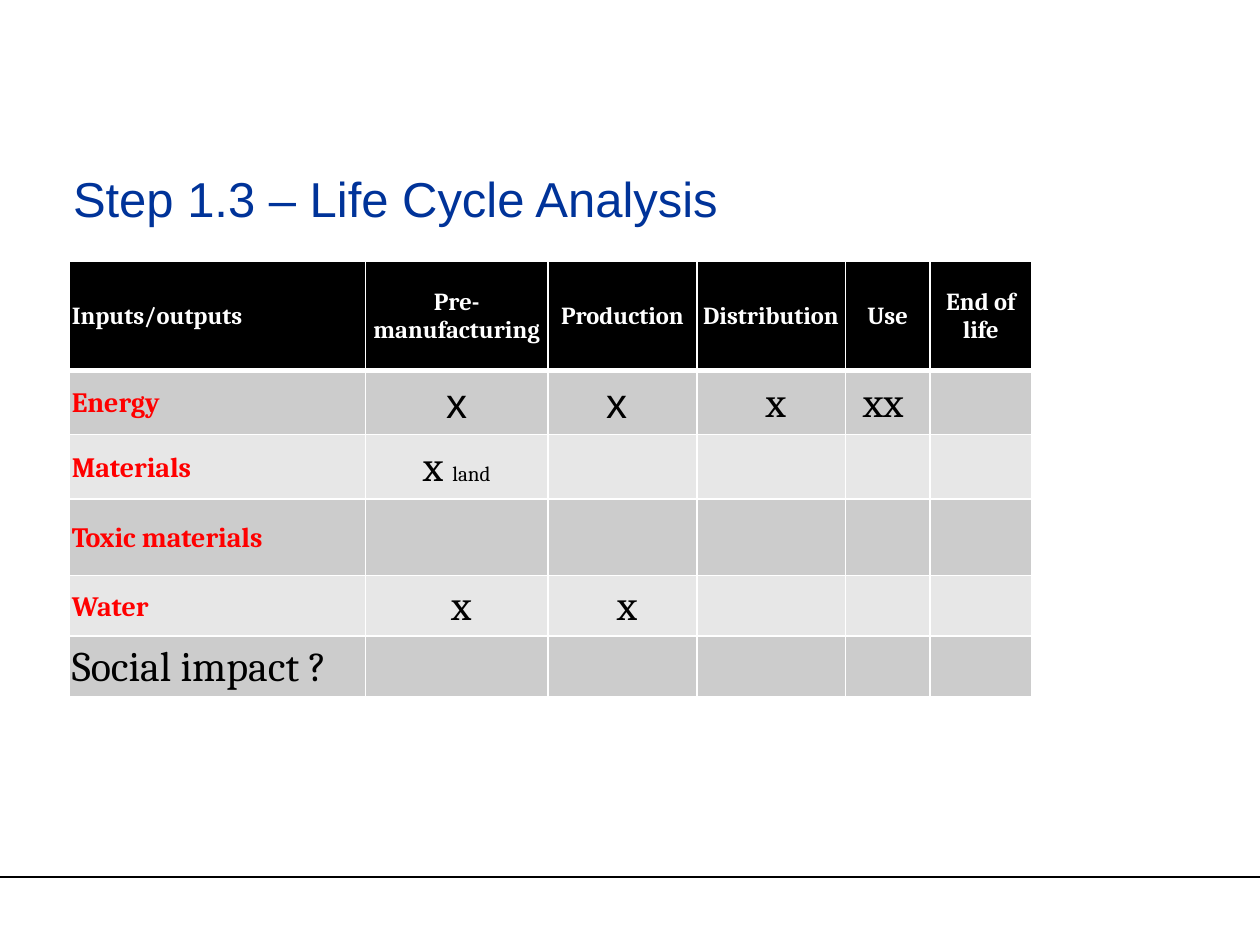
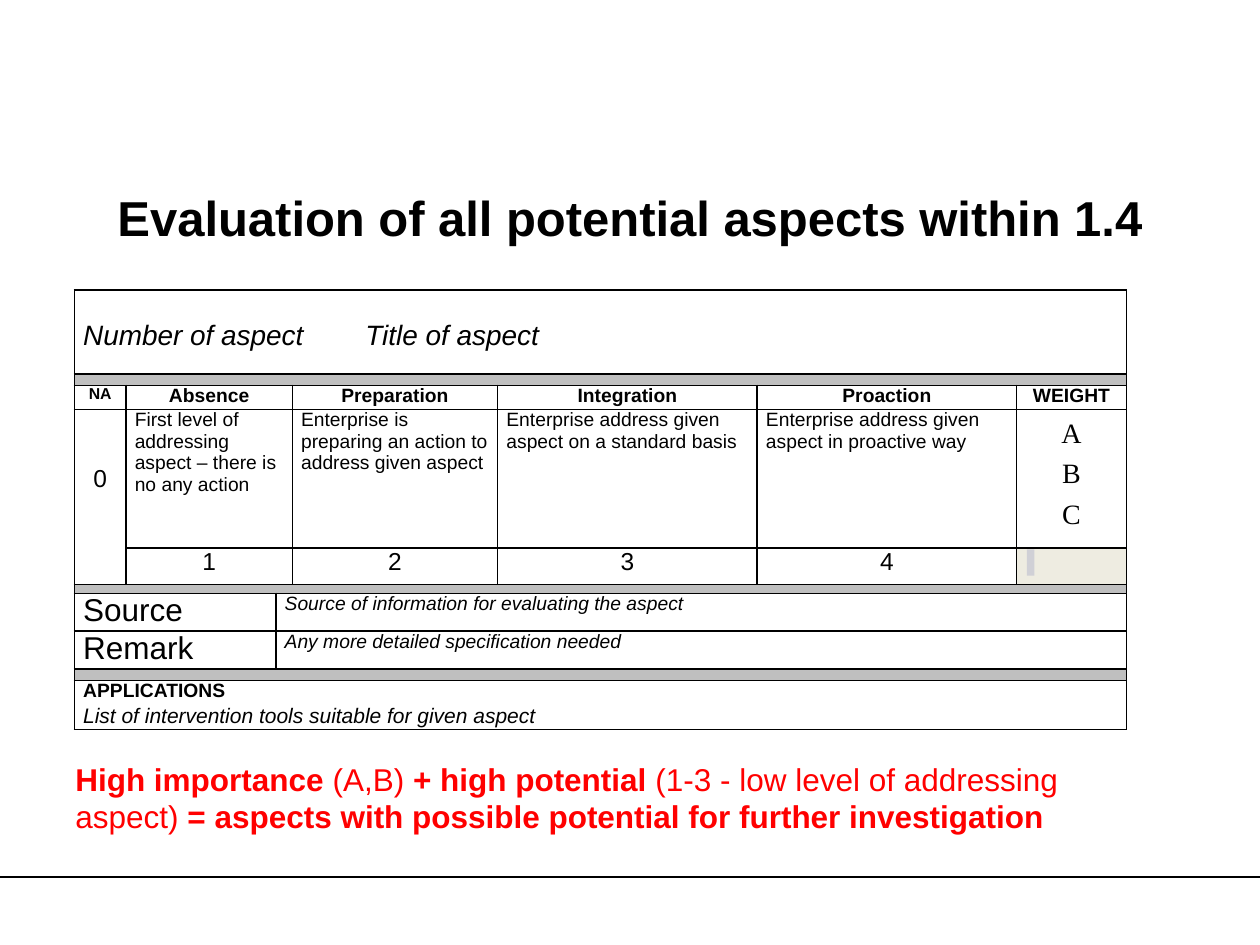
from lxml import etree
from pptx import Presentation
from pptx.dml.color import RGBColor
from pptx.enum.shapes import MSO_CONNECTOR, MSO_SHAPE
from pptx.enum.text import MSO_ANCHOR, PP_ALIGN
from pptx.oxml.ns import qn
from pptx.util import Inches, Pt

LEFT, CENTER = PP_ALIGN.LEFT, PP_ALIGN.CENTER
TOP, MIDDLE = MSO_ANCHOR.TOP, MSO_ANCHOR.MIDDLE
WIDTH, HEIGHT = 10, 7.5
MARGIN = 0.058 * WIDTH
FOOTER_Y = 0.928 * HEIGHT
COLORS = {
    "black": "000000", "white": "FFFFFF", "title": "003399", "red": "FF0000",
    "dark_row": "CCCCCC", "light_row": "E7E7E7", "separator": "BFBFBF",
    "score": "EEECE1", "marker": "D0D0D6",
}
SIDES = {"left": "a:lnL", "right": "a:lnR", "top": "a:lnT", "bottom": "a:lnB"}

HEADER = {"name": "Cambria", "size": 14, "bold": True, "color": "white"}
INPUT = {"name": "Cambria", "size": 16, "bold": True, "color": "red"}
MARK = {"name": "Cambria", "size": 24}
ARIAL_MARK = {"name": "Arial", "size": 24}
TITLE = {"name": "Arial", "size": 28}
BODY = {"name": "Arial", "size": 11}
BOLD = BODY | {"bold": True}
ITALIC = BODY | {"italic": True}
SCORE = BODY | {"size": 14}
LABEL = BODY | {"size": 18}
NOTE = LABEL | {"color": "red"}
WEIGHT = {"name": "Times New Roman", "size": 16}


def rgb(color):
    return RGBColor.from_string(COLORS[color])


def set_attributes(target, values):
    for name, value in values.items():
        setattr(target, name, value)


def write(text_frame, paragraphs, **paragraph_format):
    """Write paragraphs, each a list of (text, font format) runs."""
    for index, runs in enumerate(paragraphs):
        paragraph = text_frame.add_paragraph() if index else text_frame.paragraphs[0]
        set_attributes(paragraph, paragraph_format)
        if not index:
            paragraph.space_before = Pt(0)
        for text, style in runs:
            run = paragraph.add_run()
            run.text = text
            values = {"bold": False, "italic": False} | style
            run.font.color.rgb = rgb(values.pop("color", "black"))
            set_attributes(run.font, values | {"size": Pt(values["size"])})


def add_text(slide, box, runs, anchor=TOP, inset=0, **paragraph_format):
    text_frame = slide.shapes.add_textbox(*map(Inches, box)).text_frame
    set_attributes(text_frame, {
        "word_wrap": True, "vertical_anchor": anchor,
        "margin_left": Inches(2 * inset), "margin_right": Inches(2 * inset),
        "margin_top": Inches(inset), "margin_bottom": Inches(inset)})
    write(text_frame, [runs], **paragraph_format)


def add_footer_line(slide):
    line = slide.shapes.add_connector(
        MSO_CONNECTOR.STRAIGHT, 0, Inches(FOOTER_Y), Inches(WIDTH), Inches(FOOTER_Y))
    line.line.color.rgb = rgb("black")
    line.line.width = Pt(1.5)
    etree.SubElement(line._element.spPr, qn("a:effectLst"))


def add_slide(presentation):
    slide = presentation.slides.add_slide(presentation.slide_layouts[6])
    add_footer_line(slide)
    return slide


def set_borders(cell, color, **widths):
    """Draw all four sides 1 pt wide unless a side is given its own width; 0 hides it."""
    properties = cell._tc.get_or_add_tcPr()
    for index, (side, tag) in enumerate(SIDES.items()):
        width = widths.get(side, 1)
        line = etree.Element(qn(tag), w=str(Pt(width)))
        if width:
            fill = etree.SubElement(line, qn("a:solidFill"))
            etree.SubElement(fill, qn("a:srgbClr"), val=COLORS[color])
        else:
            etree.SubElement(line, qn("a:noFill"))
        properties.insert(index, line)


def shrink_empty_line(cell):
    """Keep a cell without text from stretching its row."""
    paragraph = cell.text_frame.paragraphs[0]._p
    etree.SubElement(paragraph, qn("a:endParaRPr"), sz="300")


def add_table(slide, left, top, columns, rows, margins):
    frame = slide.shapes.add_table(
        len(rows), len(columns), Inches(left), Inches(top),
        Inches(sum(columns)), Inches(sum(rows)))
    table = frame.table
    table.first_row = table.horz_banding = False
    for column, width in zip(table.columns, columns):
        column.width = Inches(width)
    for row, height in zip(table.rows, rows):
        row.height = Inches(height)
    for cell in table.iter_cells():
        cell.fill.background()
        for side, margin in zip(SIDES, margins):
            setattr(cell, f"margin_{side}", Inches(margin))
    return table


def fill_cell(cell, color):
    cell.fill.solid()
    cell.fill.fore_color.rgb = rgb(color)


def build_life_cycle(presentation):
    slide = add_slide(presentation)
    add_text(slide, (MARGIN, 0.2 * HEIGHT, WIDTH - 2 * MARGIN, 0.5),
             [("Step 1.3 – Life Cycle Analysis", TITLE | {"color": "title"})],
             line_spacing=Pt(22))
    headings = ["Inputs/outputs", "Pre-manufacturing", "Production",
                "Distribution", "Use", "End of life"]
    impacts = [
        [[("Energy", INPUT)], [(" x ", ARIAL_MARK)], [("x ", ARIAL_MARK)],
         [(" x", MARK)], [("xx ", MARK)]],
        [[("Materials", INPUT)], [("x ", MARK), ("land", MARK | {"size": 12})]],
        [[("Toxic materials", INPUT)]],
        [[("Water", INPUT)], [(" x", MARK)], [(" x", MARK)]],
        [[("Social impact ?", MARK)]],
    ]
    contents = [[[(heading, HEADER)] for heading in headings]] + impacts
    table = add_table(slide, 0.55, 2.07, [2.35, 1.45, 1.18, 1.18, 0.67, 0.81],
                      [0.87, 0.51, 0.51, 0.61, 0.48, 0.48], (0.02, 0.02, 0.04, 0.02))
    for row, entries in enumerate(contents):
        color = "black" if row == 0 else "dark_row" if row % 2 else "light_row"
        for column in range(len(headings)):
            cell = table.cell(row, column)
            fill_cell(cell, color)
            set_borders(cell, "white", bottom=1 if row else 3, top=3 if row == 1 else 1)
            if column < len(entries):
                cell.vertical_anchor = MIDDLE
                write(cell.text_frame, [entries[column]],
                      alignment=CENTER if column else LEFT)
            else:
                shrink_empty_line(cell)


def merge_evaluation_cells(table):
    last = len(table.columns) - 1
    spans = [(row, 0, row, last) for row in (0, 1, 5, 8, 9, 10)]
    spans += [(row, 1, row, 2) for row in (2, 3, 4)]
    for row in (6, 7):
        spans += [(row, 0, row, 1), (row, 2, row, last)]
    spans.append((3, 0, 4, 0))
    for top, left, bottom, right in spans:
        table.cell(top, left).merge(table.cell(bottom, right))


def add_evaluation_table(slide):
    table = add_table(slide, 0.59, 2.3, [0.41, 1.19, 0.13, 1.63, 2.06, 2.06, 0.87],
                      [0.67, 0.09, 0.19, 1.1, 0.29, 0.07, 0.28, 0.28, 0.09, 0.19, 0.2],
                      (0.07, 0.07, 0, 0))
    merge_evaluation_cells(table)
    levels = [
        (1, "Absence", "First level of addressing aspect – there is no any action"),
        (3, "Preparation", "Enterprise is preparing an action to address given aspect"),
        (4, "Integration", "Enterprise address given aspect on a standard basis"),
        (5, "Proaction", "Enterprise address given aspect in proactive way"),
    ]
    entries = [
        (0, 0, "Number of aspect\tTitle of aspect", ITALIC | {"size": 16}, LEFT),
        (2, 0, "NA", BOLD | {"size": 9}, CENTER),
        (2, 6, "WEIGHT", BOLD, CENTER),
        (3, 0, "0", SCORE, CENTER),
        (6, 0, "Source", LABEL, LEFT),
        (6, 2, "Source of information for evaluating the aspect", ITALIC, LEFT),
        (7, 0, "Remark", LABEL, LEFT),
        (7, 2, "Any more detailed specification needed", ITALIC, LEFT),
        (9, 0, "APPLICATIONS", BOLD, LEFT),
        (10, 0, "List of intervention tools suitable for given aspect",
         ITALIC | {"size": 12}, LEFT),
    ]
    for score, (column, name, meaning) in enumerate(levels, start=1):
        entries += [(2, column, name, BOLD, CENTER), (3, column, meaning, BODY, LEFT),
                    (4, column, str(score), SCORE, CENTER)]
    for row, column, text, style, alignment in entries:
        write(table.cell(row, column).text_frame, [[(text, style)]], alignment=alignment)

    weights = table.cell(3, 6)
    weights.margin_top = Inches(0.07)
    write(weights.text_frame, [[(letter, WEIGHT)] for letter in "ABC"],
          alignment=CENTER, space_before=Pt(5.5))
    table.cell(3, 0).margin_top = Inches(0.44)
    heading = table.cell(0, 0)
    heading.margin_top = Inches(0.24)
    properties = heading.text_frame.paragraphs[0]._p.get_or_add_pPr()
    tabs = etree.SubElement(properties, qn("a:tabLst"))
    etree.SubElement(tabs, qn("a:tab"), pos=str(Inches(2.24)), algn="l")

    for row in (1, 5, 8):
        fill_cell(table.cell(row, 0), "separator")
    fill_cell(table.cell(4, 6), "score")
    for row in range(len(table.rows)):
        for column in range(len(table.columns)):
            cell = table.cell(row, column)
            set_borders(cell, "black", bottom=0 if row == 9 else 1, top=0 if row == 10 else 1)
            if not cell.text_frame.text:
                shrink_empty_line(cell)


def add_score_marker(slide):
    marker = slide.shapes.add_shape(
        MSO_SHAPE.RECTANGLE, *map(Inches, (8.15, 4.36, 0.06, 0.21)))
    marker.shadow.inherit = False
    marker.fill.solid()
    marker.fill.fore_color.rgb = rgb("marker")
    marker.line.fill.background()


def build_evaluation(presentation):
    slide = add_slide(presentation)
    add_text(slide, (MARGIN, 1.46, WIDTH - 2 * MARGIN, 0.55),
             [("Evaluation of all potential aspects within 1.4", TITLE | {"bold": True})],
             anchor=MIDDLE, alignment=CENTER, line_spacing=Pt(32))
    add_evaluation_table(slide)
    add_score_marker(slide)
    strong = NOTE | {"bold": True}
    add_text(slide, (0.5, 5.98, 8.44, 0.71), [
        ("High importance", strong),
        (" (A,B) ", NOTE),
        ("+ high potential", strong),
        (" (1-3 - low level of addressing aspect) ", NOTE),
        ("= aspects with possible potential for further investigation", strong),
    ], inset=0.05)


def main():
    presentation = Presentation()
    presentation.slide_width = Inches(WIDTH)
    presentation.slide_height = Inches(HEIGHT)
    build_life_cycle(presentation)
    build_evaluation(presentation)
    presentation.save("out.pptx")


if __name__ == "__main__":
    main()
